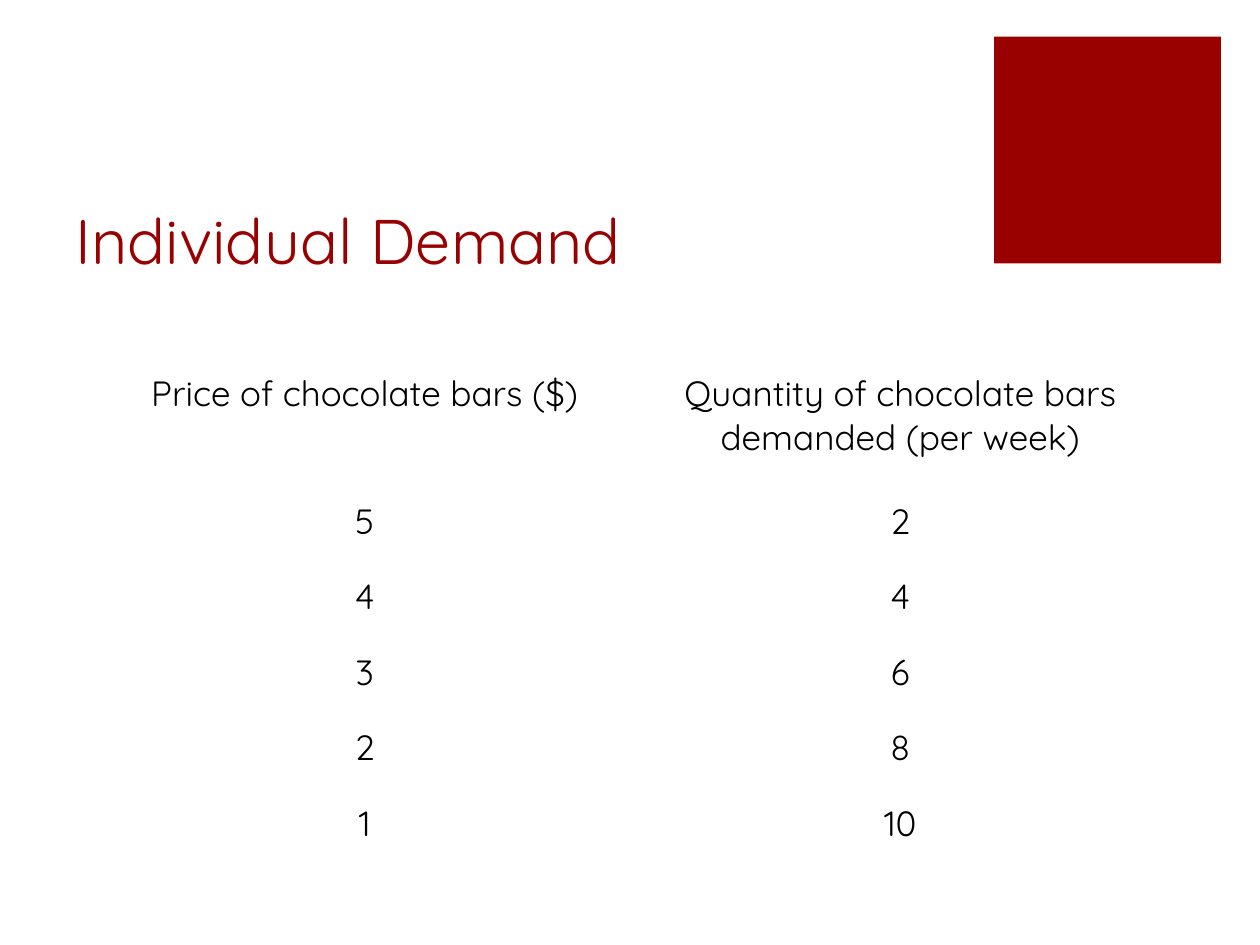
from typing import NamedTuple

from pptx import Presentation
from pptx.dml.color import RGBColor
from pptx.enum.shapes import MSO_SHAPE
from pptx.enum.text import MSO_ANCHOR, PP_ALIGN
from pptx.slide import Slide
from pptx.text.text import _Paragraph as Paragraph
from pptx.util import Emu, Pt

EMU_PER_PX = 9144  # 100 px to the inch
FONT = "Quicksand"
COLOURS = {"accent": "990000", "text": "000000"}


class Box(NamedTuple):
    left: int
    top: int
    width: int
    height: int

    def emu(self) -> tuple[Emu, ...]:
        return tuple(px(length) for length in self)


class DemandRow(NamedTuple):
    price: str
    quantity: str


HEADER = DemandRow(
    "Price of chocolate bars ($)",
    "Quantity of chocolate bars demanded (per week)",
)
DEMAND = [DemandRow(str(price), str(12 - 2 * price)) for price in range(5, 0, -1)]
HEADER_HEIGHT = 101
ROW_HEIGHT = 60


def px(length: int) -> Emu:
    return Emu(length * EMU_PER_PX)


def colour(name: str) -> RGBColor:
    return RGBColor.from_string(COLOURS[name])


def add_run(paragraph: Paragraph, text: str, size: int, colour_name: str) -> None:
    run = paragraph.add_run()
    run.text = text
    run.font.name = FONT
    run.font.size = Pt(size)
    run.font.color.rgb = colour(colour_name)


def add_accent_square(slide: Slide, box: Box) -> None:
    square = slide.shapes.add_shape(MSO_SHAPE.RECTANGLE, *box.emu())
    square.shadow.inherit = False
    square.fill.solid()
    square.fill.fore_color.rgb = colour("accent")
    square.line.fill.background()


def set_title(slide: Slide, text: str, box: Box) -> None:
    title = slide.shapes.title
    title.left, title.top, title.width, title.height = box.emu()
    frame = title.text_frame
    frame.word_wrap = True
    frame.vertical_anchor = MSO_ANCHOR.BOTTOM
    paragraph = frame.paragraphs[0]
    paragraph.alignment = PP_ALIGN.LEFT
    add_run(paragraph, text, 36, "accent")


def add_demand_table(slide: Slide, rows: list[DemandRow], box: Box) -> None:
    columns = len(DemandRow._fields)
    table = slide.shapes.add_table(len(rows), columns, *box.emu()).table
    table.first_row = False
    table.horz_banding = False
    for column in table.columns:
        column.width = px(box.width // columns)
    for row_index, row in enumerate(rows):
        table.rows[row_index].height = px(ROW_HEIGHT if row_index else HEADER_HEIGHT)
        for column_index, text in enumerate(row):
            cell = table.cell(row_index, column_index)
            cell.fill.background()
            paragraph = cell.text_frame.paragraphs[0]
            paragraph.alignment = PP_ALIGN.CENTER
            add_run(paragraph, text, 20, "text")


def main() -> None:
    presentation = Presentation()
    presentation.slide_width = px(1000)
    presentation.slide_height = px(750)
    title_only = presentation.slide_layouts[5]
    slide = presentation.slides.add_slide(title_only)

    add_accent_square(slide, Box(789, 29, 180, 180))
    set_title(slide, "Individual Demand", Box(50, 100, 712, 125))
    table_height = HEADER_HEIGHT + ROW_HEIGHT * len(DEMAND)
    add_demand_table(slide, [HEADER, *DEMAND], Box(77, 290, 850, table_height))
    presentation.save("out.pptx")


if __name__ == "__main__":
    main()
